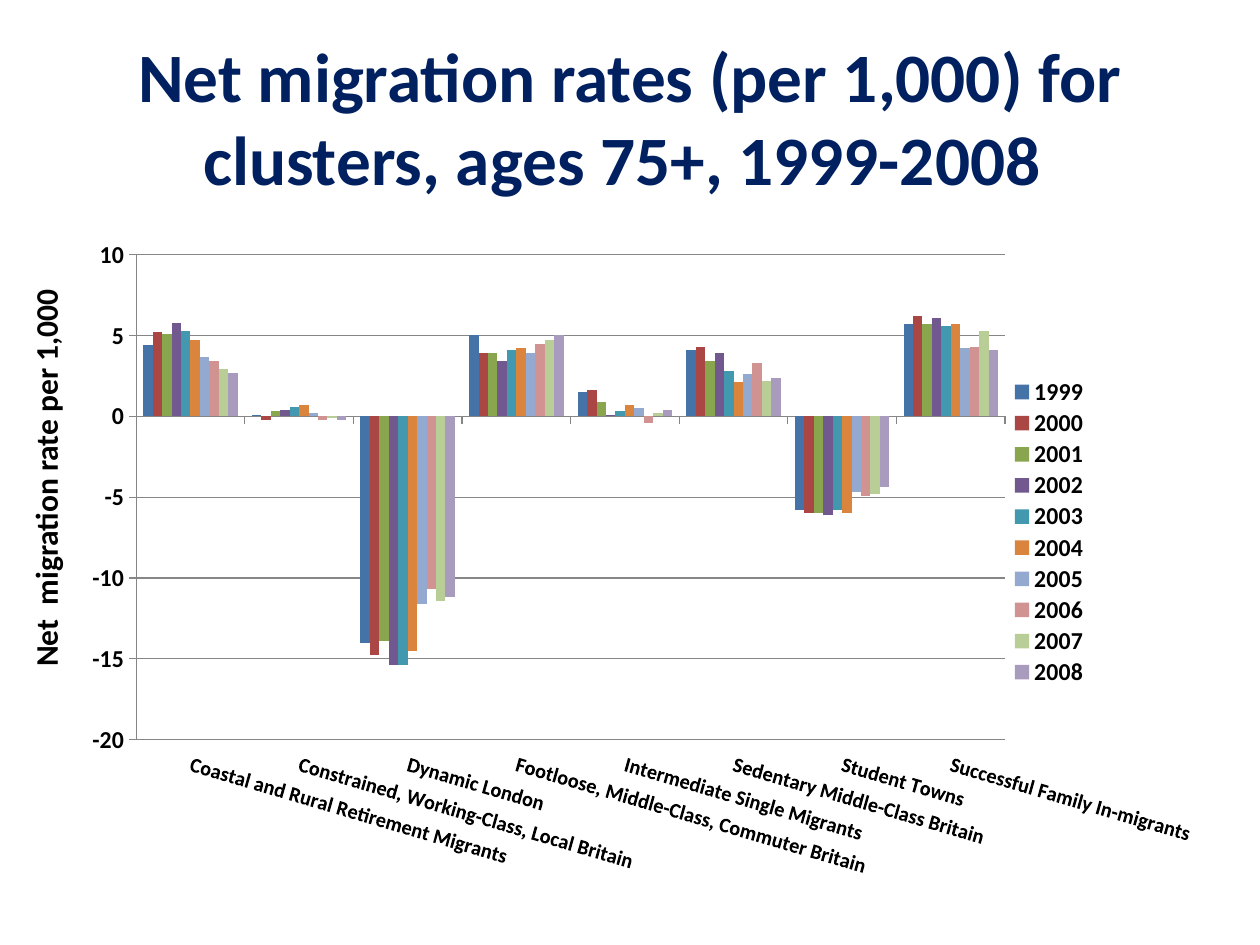
from lxml import etree
from pptx import Presentation
from pptx.chart.data import CategoryChartData
from pptx.dml.color import RGBColor
from pptx.enum.chart import XL_CHART_TYPE, XL_LEGEND_POSITION, XL_TICK_LABEL_POSITION, XL_TICK_MARK
from pptx.enum.text import MSO_ANCHOR, PP_ALIGN
from pptx.oxml.ns import qn
from pptx.util import Inches, Pt

COLUMNS = XL_CHART_TYPE.COLUMN_CLUSTERED
LEGEND_RIGHT = XL_LEGEND_POSITION.RIGHT
LABELS_LOW = XL_TICK_LABEL_POSITION.LOW
TICK_OUTSIDE = XL_TICK_MARK.OUTSIDE
MIDDLE = MSO_ANCHOR.MIDDLE
CENTER = PP_ALIGN.CENTER

FONT = "Calibri"
LABEL_ANGLE = 16
COLORS = {"title": "002060", "text": "000000", "line": "868686"}
CLUSTERS = [
    "Coastal and Rural Retirement Migrants",
    "Constrained, Working-Class, Local Britain",
    "Dynamic London",
    "Footloose, Middle-Class, Commuter Britain",
    "Intermediate Single Migrants",
    "Sedentary Middle-Class Britain",
    "Student Towns",
    "Successful Family In-migrants",
]
# year: (colour, net migration rate of each cluster)
RATES = {
    "1999": ("4572A7", [4.4, 0.1, -14, 5, 1.5, 4.1, -5.8, 5.7]),
    "2000": ("AA4643", [5.2, -0.2, -14.8, 3.9, 1.6, 4.3, -6, 6.2]),
    "2001": ("89A54E", [5.1, 0.3, -13.9, 3.9, 0.9, 3.4, -6, 5.7]),
    "2002": ("71588F", [5.8, 0.4, -15.4, 3.4, 0.1, 3.9, -6.1, 6.1]),
    "2003": ("4198AF", [5.3, 0.6, -15.4, 4.1, 0.3, 2.8, -5.8, 5.6]),
    "2004": ("DB843D", [4.7, 0.7, -14.5, 4.2, 0.7, 2.1, -6, 5.7]),
    "2005": ("93A9CF", [3.7, 0.2, -11.6, 3.9, 0.5, 2.6, -4.7, 4.2]),
    "2006": ("D19392", [3.4, -0.2, -10.7, 4.5, -0.4, 3.3, -4.9, 4.3]),
    "2007": ("B9CD96", [2.9, -0.1, -11.4, 4.7, 0.2, 2.2, -4.8, 5.3]),
    "2008": ("A99BBD", [2.7, -0.2, -11.2, 5, 0.4, 2.4, -4.4, 4.1]),
}


def style_font(font, size, color, bold=True):
    font.name = FONT
    font.size = Pt(size)
    font.bold = bold
    font.color.rgb = RGBColor.from_string(color)


def style_line(line):
    line.color.rgb = RGBColor.from_string(COLORS["line"])
    line.width = Pt(0.75)


def set_layout(element, x, y, w, h, inner=False):
    """Place a plot area or legend by fractions of the chart frame."""
    for old in element.findall(qn("c:layout")):
        element.remove(old)
    layout = etree.Element(qn("c:layout"))
    manual = etree.SubElement(layout, qn("c:manualLayout"))
    settings = [("layoutTarget", "inner")] if inner else []
    settings += [("xMode", "edge"), ("yMode", "edge"), ("x", x), ("y", y), ("w", w), ("h", h)]
    for tag, value in settings:
        etree.SubElement(manual, qn(f"c:{tag}")).set("val", str(value))
    position = element.find(qn("c:legendPos"))
    if position is None:
        element.insert(0, layout)
    else:
        position.addnext(layout)


def add_title(s, text):
    sp = s.shapes.title
    sp.left, sp.top, sp.width, sp.height = Inches(0.5), Inches(0.3), Inches(9), Inches(1.25)
    tf = sp.text_frame
    tf.text = text
    tf.word_wrap = True
    tf.vertical_anchor = MIDDLE
    p = tf.paragraphs[0]
    p.alignment = CENTER
    style_font(p.runs[0].font, 39.6, COLORS["title"])


def format_axes(chart):
    cat, val = chart.category_axis, chart.value_axis
    for axis, size in ((cat, 12), (val, 14)):
        axis.major_tick_mark = TICK_OUTSIDE
        style_font(axis.tick_labels.font, size, COLORS["text"])
        style_line(axis.format.line)
    cat.tick_label_position = LABELS_LOW
    cat.has_major_gridlines = False
    body = cat._element.find(qn("c:txPr")).find(qn("a:bodyPr"))
    body.set("rot", str(LABEL_ANGLE * 60000))
    val.minimum_scale, val.maximum_scale, val.major_unit = -20, 10, 5
    val.tick_labels.number_format = "0"
    val.tick_labels.number_format_is_linked = False
    val.has_major_gridlines = True
    style_line(val.major_gridlines.format.line)


def add_rate_chart(s):
    data = CategoryChartData()
    data.categories = CLUSTERS
    for year, (_, rates) in RATES.items():
        data.add_series(year, rates)
    chart = s.shapes.add_chart(
        COLUMNS, Inches(0.47), Inches(1.87), Inches(9), Inches(5.1), data).chart
    chart.has_title = False
    style_font(chart.font, 10, COLORS["text"], bold=False)
    plot = chart.plots[0]
    plot.vary_by_categories = False
    plot.gap_width = 150
    plot.overlap = 0
    for series in plot.series:
        series.invert_if_negative = False
        fill = series.format.fill
        fill.solid()
        fill.fore_color.rgb = RGBColor.from_string(RATES[series.name][0])
    format_axes(chart)
    chart.has_legend = True
    legend = chart.legend
    legend.position = LEGEND_RIGHT
    legend.include_in_layout = False
    style_font(legend.font, 14, COLORS["text"])
    set_layout(legend._element, 0.85, 0.22, 0.1, 0.49)
    plot_area = chart._chartSpace.find(qn("c:chart")).find(qn("c:plotArea"))
    set_layout(plot_area, 0.07, 0.03, 0.79, 0.76, inner=True)


def add_rate_label(s, text):
    sp = s.shapes.add_textbox(Inches(-1.25), Inches(3.58), Inches(3.22), Inches(0.4))
    sp.rotation = 270
    tf = sp.text_frame
    tf.text = text
    tf.word_wrap = False
    style_font(tf.paragraphs[0].runs[0].font, 18, COLORS["text"])


def main():
    prs = Presentation()
    prs.slide_width, prs.slide_height = Inches(10), Inches(7.5)
    s = prs.slides.add_slide(prs.slide_layouts[5])
    add_title(s, "Net migration rates (per 1,000) for clusters, ages 75+, 1999-2008 ")
    add_rate_chart(s)
    add_rate_label(s, "Net  migration rate per 1,000")
    prs.save("out.pptx")


if __name__ == "__main__":
    main()
